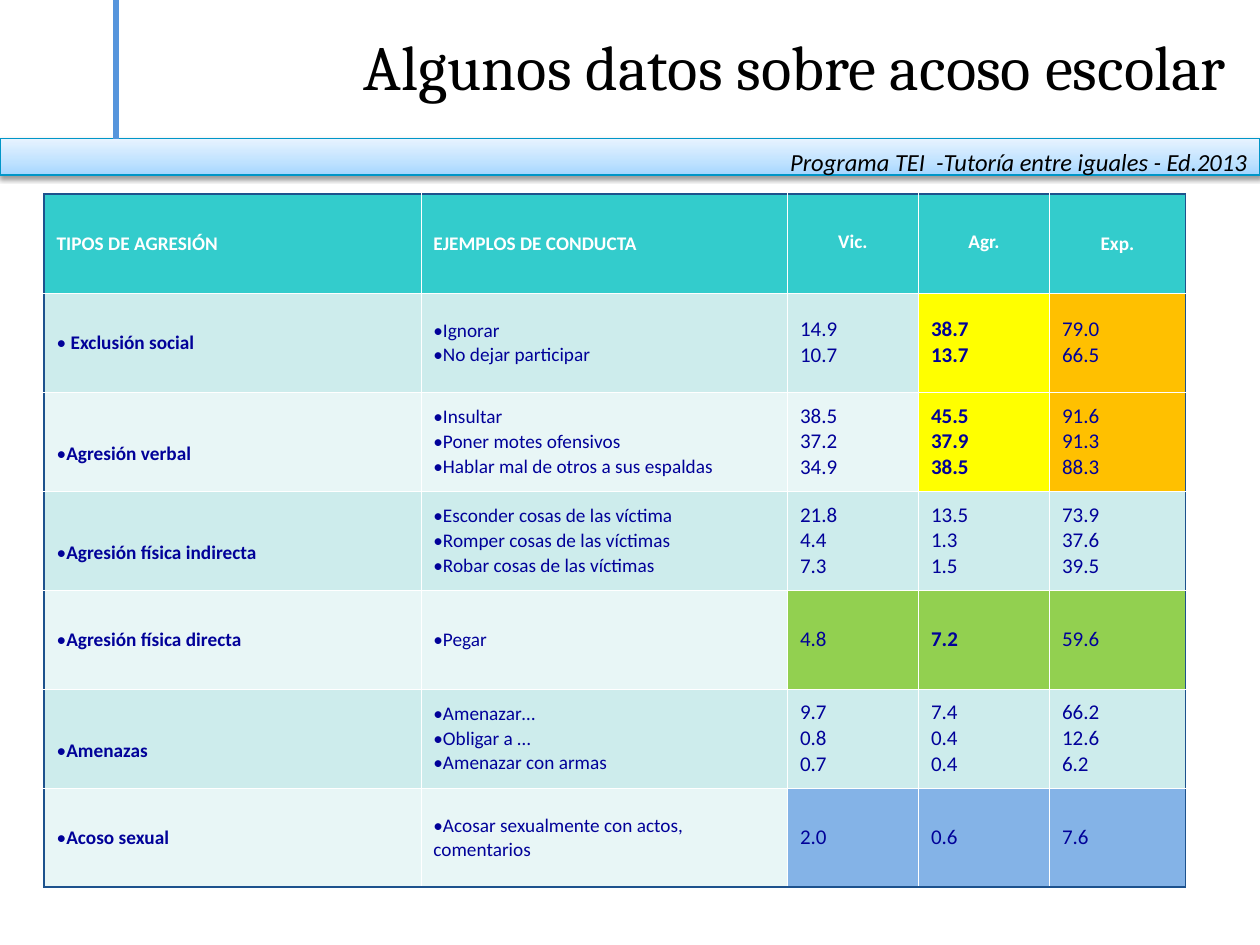
"""Build a slide with a table of school bullying figures."""
from copy import deepcopy
from lxml import etree
from pptx import Presentation
from pptx import util as u
from pptx.dml.color import RGBColor
from pptx.enum import shapes, text
from pptx.oxml import parse_xml
from pptx.oxml.ns import qn

INK = {"head": "33CCCC", "dark": "CDECEC", "pale": "E8F6F6", "gold": "FFFF00",
       "amber": "FFC000", "green": "92D050", "blue": "84B3E7", "navy": "010199",
       "edge": "1D528D", "white": "FFFFFF", "black": "000000", "rule": "5695DC",
       "rim": "0096C8", "low": "A5D6FF", "mid": "BFE2FF", "high": "E7F3FF"}
NS = 'xmlns:a="http://schemas.openxmlformats.org/drawingml/2006/main"'
HEADS = ["TIPOS DE AGRESIÓN", "EJEMPLOS DE CONDUCTA", "Vic.", "Agr.", "Exp."]
ROWS = [
    (" Exclusión social", ["Ignorar", "No dejar participar"],
     ["14.9", "10.7"], ["38.7", "13.7"], ["79.0", "66.5"]),
    ("Agresión verbal",
     ["Insultar", "Poner motes ofensivos", "Hablar mal de otros a sus espaldas"],
     ["38.5", "37.2", "34.9"], ["45.5", "37.9", "38.5"], ["91.6", "91.3", "88.3"]),
    ("Agresión física indirecta",
     ["Esconder cosas de las víctima", "Romper cosas de las víctimas",
      "Robar cosas de las víctimas"],
     ["21.8", "4.4", "7.3"], ["13.5", "1.3", "1.5"], ["73.9", "37.6", "39.5"]),
    ("Agresión física directa", ["Pegar"], ["4.8"], ["7.2"], ["59.6"]),
    ("Amenazas", ["Amenazar…", "Obligar a …", "Amenazar con armas"],
     ["9.7", "0.8", "0.7"], ["7.4", "0.4", "0.4"], ["66.2", "12.6", "6.2"]),
    ("Acoso sexual", ["Acosar sexualmente con actos, comentarios"],
     ["2.0"], ["0.6"], ["7.6"]),
]
FILLS = {(1, 3): "gold", (2, 3): "gold", (1, 4): "amber", (2, 4): "amber"}
FILLS.update({(row, col): name for row, name in ((4, "green"), (6, "blue"))
              for col in (2, 3, 4)})
BOLD = [(1, 3), (2, 3), (4, 3)]


def rgb(name):
    return RGBColor.from_string(INK[name])


def write(par, line, size, tint, face="Calibri", bold=False, dot=False):
    run = par.add_run()
    run.text = line
    if dot:
        props = par._p.get_or_add_pPr()
        props.set("marL", "0")
        props.set("indent", "0")
        for mark in (f'<a:buClr {NS}><a:srgbClr val="{INK[tint]}"/></a:buClr>',
                     f'<a:buFont {NS} typeface="{face}"/>',
                     f'<a:buChar {NS} char="•"/>'):
            props.append(parse_xml(mark))
    font = run.font if dot else par.font
    font.size, font.name, font.bold = u.Pt(size), face, bold
    font.color.rgb = rgb(tint)


deck = Presentation()
deck.slide_width, deck.slide_height = u.Inches(10), u.Inches(7.5)
slide = deck.slides.add_slide(deck.slide_layouts[6])

bar = slide.shapes.add_shape(shapes.MSO_SHAPE.RECTANGLE, 0, u.Inches(1.1),
                             u.Inches(10), u.Inches(0.29))
bar.fill.gradient()
bar.fill.gradient_angle = 90
first = bar.fill.gradient_stops[0]._gs
first.addnext(deepcopy(first))
for stop, (spot, name) in zip(bar.fill.gradient_stops,
                              [(0, "low"), (0.35, "mid"), (1, "high")]):
    stop.position, stop.color.rgb = spot, rgb(name)
bar.line.color.rgb, bar.line.width = rgb("rim"), u.Pt(0.75)
bar.shadow.inherit = False
bar._element.spPr.find(qn("a:effectLst")).append(parse_xml(
    f'<a:outerShdw {NS} blurRad="{u.Pt(3.1)}" dist="{u.Pt(1.6)}" dir="5400000" '
    f'rotWithShape="0"><a:srgbClr val="{INK["black"]}"><a:alpha val="38000"/>'
    '</a:srgbClr></a:outerShdw>'))

rule = slide.shapes.add_connector(shapes.MSO_CONNECTOR.STRAIGHT, u.Inches(0.92), 0,
                                  u.Inches(0.92), u.Inches(1.1))
rule.line.color.rgb, rule.line.width = rgb("rule"), u.Pt(3)
etree.SubElement(rule._element.spPr, qn("a:effectLst"))

for line, spot, size, face in [
        ("Programa TEI  -Tutoría entre iguales - Ed.2013",
         (6.1, 1.12, 3.9, 0.57), 14, "Calibri"),
        ("Algunos datos sobre acoso escolar", (0.25, 0.17, 9.58, 0.7), 36, "Cambria")]:
    frame = slide.shapes.add_textbox(*map(u.Inches, spot)).text_frame
    frame.word_wrap = True
    par = frame.paragraphs[0]
    par.alignment = text.PP_ALIGN.RIGHT
    write(par, line, size, "black", face)
    if size == 14:
        par.font.italic = True
    else:
        frame.vertical_anchor = text.MSO_ANCHOR.MIDDLE

grid = slide.shapes.add_table(7, 5, u.Inches(0.35), u.Inches(1.54),
                              u.Inches(9.06), u.Inches(5.5)).table
for col, wide in zip(grid.columns, (2.99, 2.91, 1.04, 1.04, 1.08)):
    col.width = u.Inches(wide)

for r, row in enumerate([HEADS] + ROWS):
    for c, item in enumerate(row):
        cell = grid.cell(r, c)
        cell.vertical_anchor = text.MSO_ANCHOR.MIDDLE
        cell.fill.solid()
        band = "dark" if r % 2 else "pale"
        cell.fill.fore_color.rgb = rgb("head" if r == 0 else FILLS.get((r, c), band))
        if c == 0 and r in (2, 3, 5):
            cell.margin_top = u.Inches(0.24)
        for n, line in enumerate([item] if isinstance(item, str) else item):
            frame = cell.text_frame
            par = frame.add_paragraph() if n else frame.paragraphs[0]
            if c < 2:
                par.line_spacing = 1.04 if n else 1.02
            elif r == 0:
                par.alignment = text.PP_ALIGN.CENTER
                if c < 4:
                    par.line_spacing = 0.76
            write(par, line, 12 if r and c > 1 else 11, "navy" if r else "white",
                  bold=r == 0 or c == 0 or (r, c) in BOLD, dot=r > 0 and c < 2)
        sides = [("L", c == 0), ("R", c == 4), ("T", r == 0), ("B", r == 6)]
        for n, (side, outer) in enumerate(sides):
            wide = u.Pt(1) if outer else u.Pt(0.11)
            tint = INK["edge" if outer else "white"]
            cell._tc.get_or_add_tcPr().insert(n, parse_xml(
                f'<a:ln{side} {NS} w="{wide}"><a:solidFill><a:srgbClr val="{tint}"/>'
                f'</a:solidFill></a:ln{side}>'))

deck.save("out.pptx")
